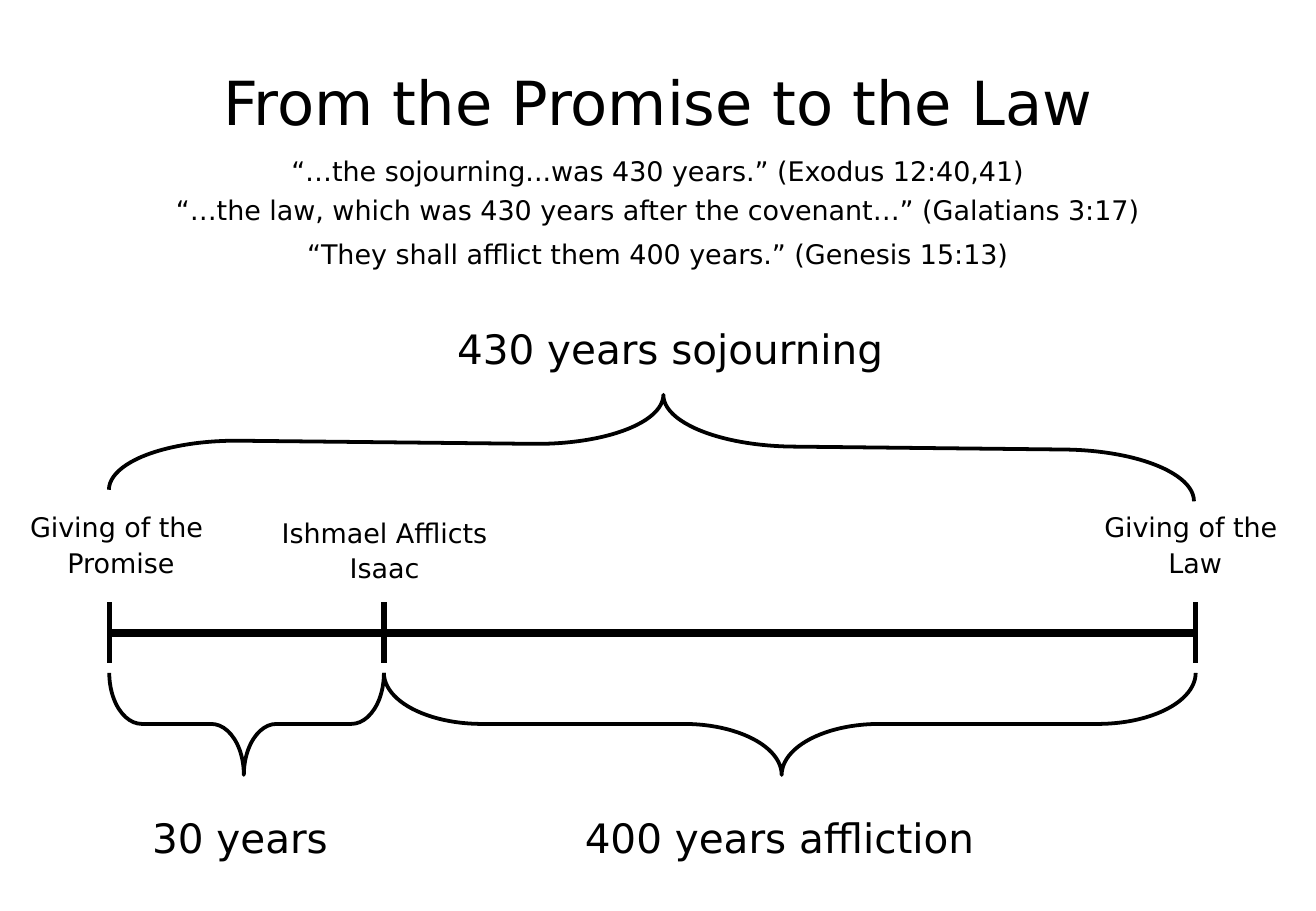
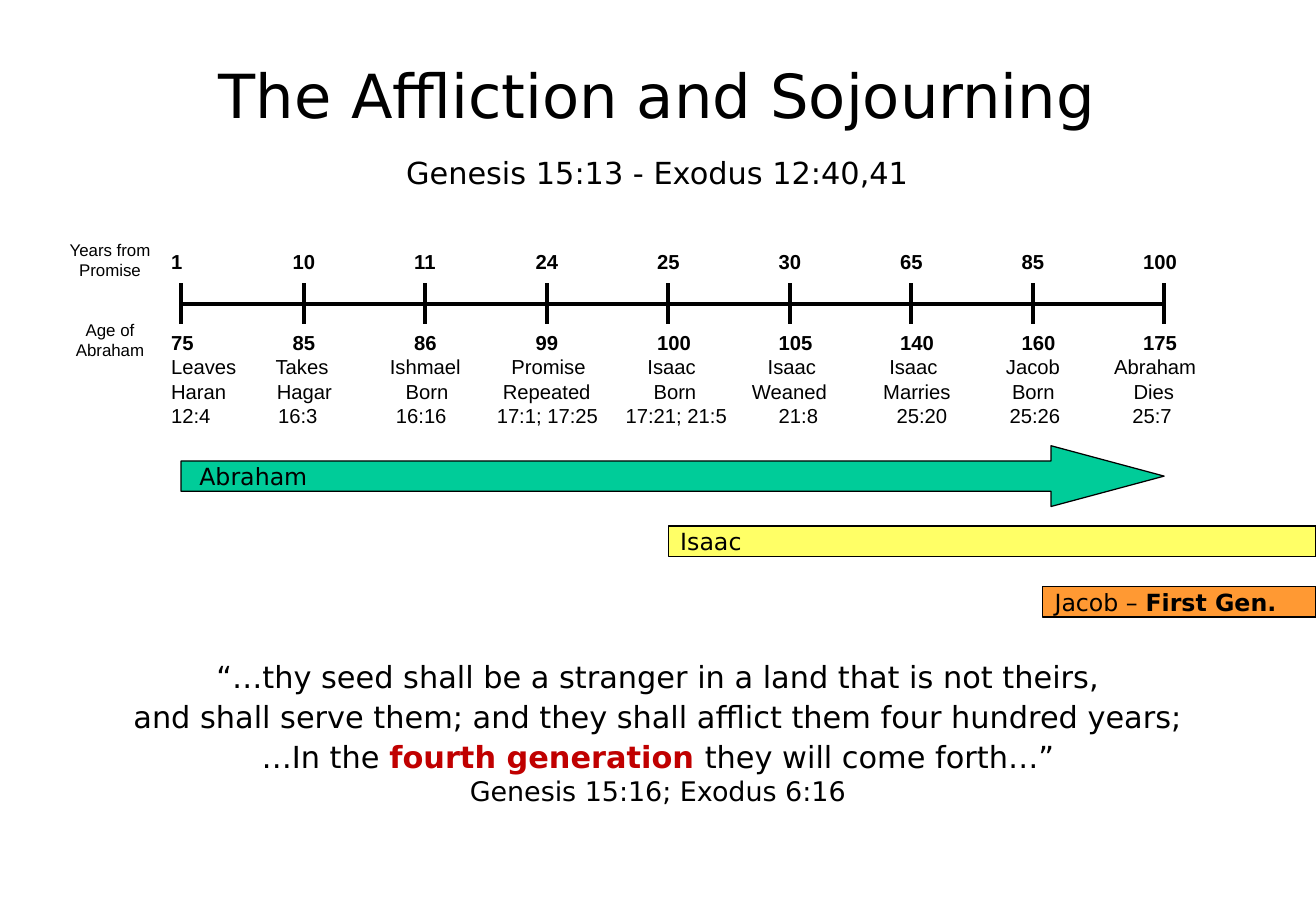
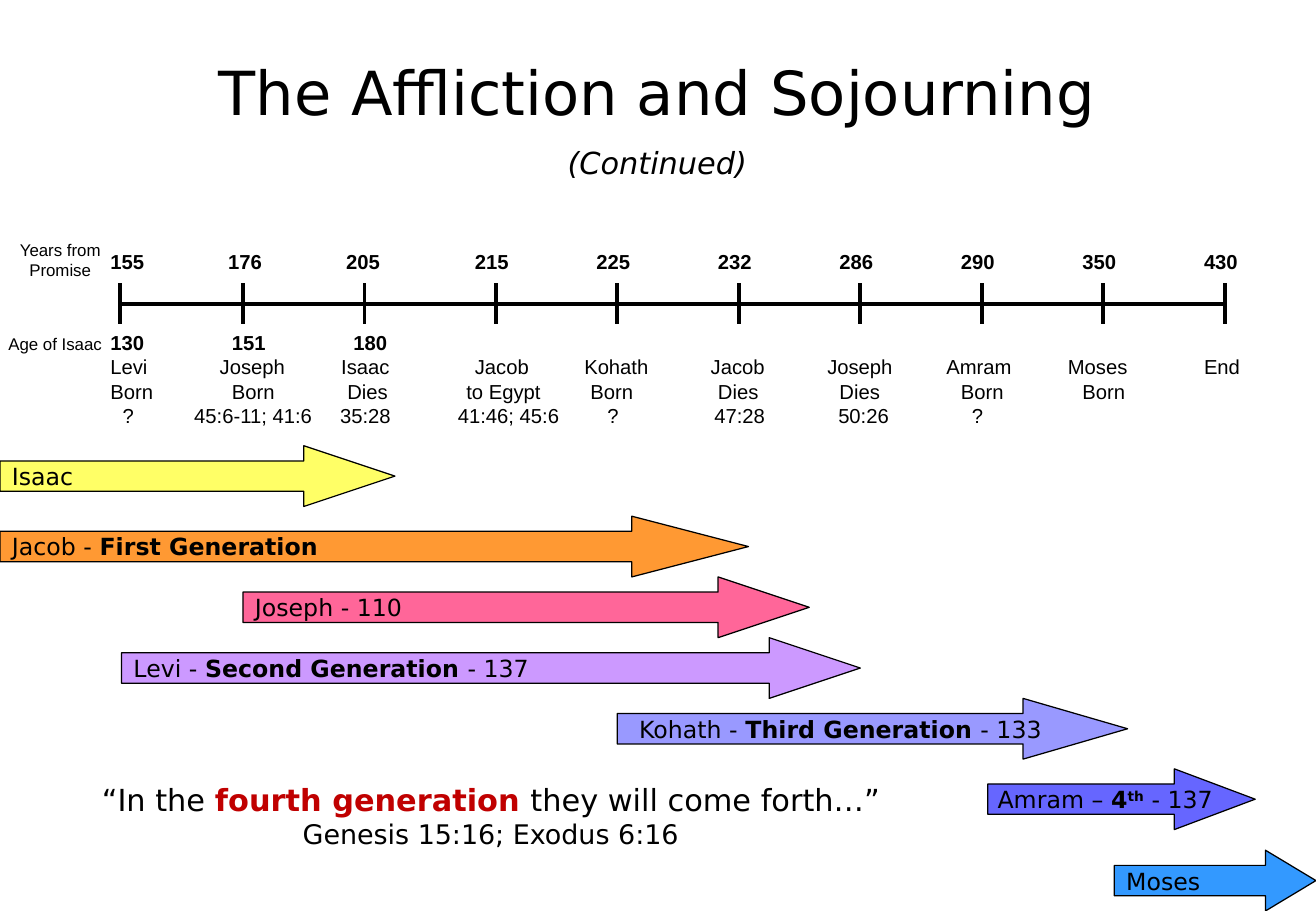
"""Build three slides on the years from the Promise to the Law."""
from lxml import etree
from pptx import Presentation
from pptx.dml.color import RGBColor
from pptx.enum.shapes import MSO_CONNECTOR, MSO_SHAPE
from pptx.enum.text import MSO_ANCHOR, MSO_AUTO_SIZE, PP_ALIGN
from pptx.oxml.ns import qn
from pptx.util import Inches, Pt

STRAIGHT = MSO_CONNECTOR.STRAIGHT
ARROW, BRACE, BAR = MSO_SHAPE.RIGHT_ARROW, MSO_SHAPE.LEFT_BRACE, MSO_SHAPE.RECTANGLE
TOP, MIDDLE = MSO_ANCHOR.TOP, MSO_ANCHOR.MIDDLE
LEFT, CENTER = PP_ALIGN.LEFT, PP_ALIGN.CENTER
FIXED = MSO_AUTO_SIZE.NONE

BLACK = RGBColor(0x00, 0x00, 0x00)
RED = RGBColor(0xC0, 0x00, 0x00)
GREEN = RGBColor(0x00, 0xCC, 0x99)
YELLOW = RGBColor(0xFF, 0xFF, 0x66)
ORANGE = RGBColor(0xFF, 0x99, 0x33)
PINK = RGBColor(0xFF, 0x66, 0x99)
LILAC = RGBColor(0xCC, 0x99, 0xFF)
PERIWINKLE = RGBColor(0x99, 0x99, 0xFF)
INDIGO = RGBColor(0x66, 0x66, 0xFF)
BLUE = RGBColor(0x33, 0x99, 0xFF)

BODY_FONT, SCALE_FONT = "DejaVu Sans", "Arial"
WIDTH, HEIGHT = 10.83, 7.5
AXIS_Y = 2.5
BOLD = {"bold": True}
ITALIC = {"italic": True}
SUPER = {"bold": True, "baseline": 30000}
KEY = {"bold": True, "color": RED}
FOURTH = ("fourth generation ", KEY)
COME_FORTH = ("they will come forth…”", {})
CITATION = "Genesis 15:16; Exodus 6:16"


class Deck:
    """Hold the shared style and the slide being built."""

    def __init__(self):
        self.prs = Presentation()
        self.prs.slide_width, self.prs.slide_height = Inches(WIDTH), Inches(HEIGHT)
        self.slide = None

    def fill_paragraph(self, paragraph, parts, size, font=BODY_FONT, align=LEFT, spacing=None, before=0):
        """Fill a paragraph from a string or from (text, style) parts."""
        paragraph.alignment = align
        paragraph.space_before = Pt(before)
        if spacing:
            paragraph.line_spacing = spacing
        for text, style in [(parts, {})] if isinstance(parts, str) else parts:
            run = paragraph.add_run()
            run.text = text
            run.font.name, run.font.size = font, Pt(size)
            run.font.bold = style.get("bold", False)
            run.font.italic = style.get("italic", False)
            run.font.color.rgb = style.get("color", BLACK)
            if "baseline" in style:
                run.font._element.set("baseline", str(style["baseline"]))

    def fill_frame(self, frame, lines, size, gap=0, **style):
        """Fill a frame with one paragraph a line and a gap between them."""
        for index, line in enumerate(lines):
            paragraph = frame.add_paragraph() if index else frame.paragraphs[0]
            self.fill_paragraph(paragraph, line, size, before=gap if index else 0, **style)

    def start(self, title, left, top, width, height, subtitle=None, gap=0):
        """Add a slide with its title and an optional subtitle."""
        self.slide = self.prs.slides.add_slide(self.prs.slide_layouts[5])
        heading = self.slide.shapes.title
        heading.left, heading.top = Inches(left), Inches(top)
        heading.width, heading.height = Inches(width), Inches(height)
        frame = heading.text_frame
        frame.auto_size, frame.vertical_anchor = FIXED, MIDDLE
        self.fill_paragraph(frame.paragraphs[0], title, 36, align=CENTER)
        if subtitle:
            self.fill_paragraph(frame.add_paragraph(), subtitle, 18, align=CENTER, before=gap)

    def text(self, left, top, width, height, lines, size, anchor=TOP, **style):
        """Add a wrapping text box and return its frame."""
        box = self.slide.shapes.add_textbox(Inches(left), Inches(top), Inches(width), Inches(height))
        frame = box.text_frame
        frame.word_wrap, frame.vertical_anchor = True, anchor
        self.fill_frame(frame, lines, size, **style)
        return frame

    def line(self, x1, y1, x2, y2, weight):
        """Add a straight black line."""
        rule = self.slide.shapes.add_connector(STRAIGHT, Inches(x1), Inches(y1), Inches(x2), Inches(y2))
        rule.line.color.rgb, rule.line.width = BLACK, Pt(weight)
        etree.SubElement(rule._element.spPr, qn("a:effectLst"))

    def outline(self, preset, left, top, width, height, weight):
        """Add a preset shape with a black outline."""
        shape = self.slide.shapes.add_shape(
            preset, Inches(left), Inches(top), Inches(width), Inches(height))
        shape.shadow.inherit = False
        shape.line.color.rgb, shape.line.width = BLACK, Pt(weight)
        return shape

    def brace(self, left, top, width, height, rotation, curl, point):
        """Add a rotated curly brace."""
        brace = self.outline(BRACE, left, top, width, height, 2.25)
        brace.fill.background()
        brace.rotation = rotation
        brace.adjustments[0], brace.adjustments[1] = curl, point

    def life(self, left, top, width, color, label, head=None, inset=0.1):
        """Add a lifetime as an arrow, or as a bar when it has no head."""
        span = self.outline(ARROW if head else BAR, left, top, width, 0.5 if head else 0.25, 0.75)
        span.fill.solid()
        span.fill.fore_color.rgb = color
        if head:
            span.adjustments[0], span.adjustments[1] = 0.5, head
        frame = span.text_frame
        frame.word_wrap, frame.vertical_anchor = False, MIDDLE
        frame.margin_left, frame.margin_right = Inches(inset), 0
        frame.margin_top = frame.margin_bottom = 0
        self.fill_paragraph(frame.paragraphs[0], label, 14)

    def row(self, paragraph, entries, style):
        """Set (start, label) entries in one line on tab stops."""
        stops = etree.SubElement(paragraph._p.get_or_add_pPr(), qn("a:tabLst"))
        for start, _ in entries:
            if start:
                etree.SubElement(stops, qn("a:tab"), pos=str(Inches(start)), algn="l")
        lead = "\t" if entries[0][0] else ""
        labels = lead + "\t".join(label for _, label in entries)
        self.fill_paragraph(paragraph, [(labels, style)], 12, SCALE_FONT)

    def timeline(self, left, ticks, years, ages, events):
        """Add the axis, its ticks and the rows above and below it."""
        self.line(ticks[0], AXIS_Y, ticks[-1], AXIS_Y, 2.25)
        for x in ticks:
            self.line(x, AXIS_Y - 0.17, x, AXIS_Y + 0.17, 2.25)
        above = self.text(left, 2, WIDTH - left, 0.3, [], 12)
        self.row(above.paragraphs[0], years, BOLD)
        below = self.text(left, 2.67, WIDTH - left, 0.91, [], 12)
        self.row(below.paragraphs[0], ages, BOLD)
        for entries in events:
            self.row(below.add_paragraph(), entries, {})

    def scale_name(self, left, top, name, align=CENTER):
        """Name one scale of the timeline."""
        self.text(left, top, 0.99, 0.43, [name], 10, font=SCALE_FONT, align=align)


def promise_to_law(deck):
    """Build the overview of the 430 years."""
    deck.start("From the Promise to the Law", 0, 0.42, WIDTH, 0.83)
    verse = {"align": CENTER, "spacing": 1.2}
    deck.text(0.25, 1.17, 10.33, 0.72, [
        "“…the sojourning...was 430 years.” (Exodus 12:40,41)",
        "“…the law, which was 430 years after the covenant…” (Galatians 3:17)"], 16, **verse)
    deck.text(0, 1.85, WIDTH, 0.42, ["“They shall afflict them 400 years.” (Genesis 15:13)"], 16, **verse)

    promise, affliction, law = 0.9, 3.16, 9.84
    deck.line(promise, 5.21, law, 5.21, 4.5)
    for x in (promise, affliction, law):
        deck.line(x, 4.96, x, 5.46, 3)
    for left, gift in ((0, "Promise"), (8.84, "Law")):
        deck.text(left, 4.21, 1.99, 0.61, ["Giving of the ", gift], 16, MIDDLE,
                  gap=8, align=CENTER, spacing=0.7)
    deck.text(2.17, 4.17, 1.99, 0.69, ["Ishmael Afflicts Isaac"], 16, MIDDLE, align=CENTER, spacing=1.1)

    deck.brace(6.08, 2.62, 0.84, 6.68, 270, 0.96, 0.49)
    deck.brace(1.61, 4.83, 0.84, 2.26, 270, 0.32, 0.49)
    deck.brace(4.95, -0.8, 0.83, 8.93, 90.6, 1.29, 0.49)
    for left, top, width, span in ((3.52, 2.6, 3.99, "430 years sojourning"),
                                   (1.04, 6.62, 1.87, "30 years"),
                                   (4.59, 6.62, 3.65, "400 years affliction")):
        deck.text(left, top, width, 0.5, [span], 24, MIDDLE, align=CENTER, spacing=1.1)


def affliction_begins(deck):
    """Build the timeline of Abraham's years."""
    deck.start("The Affliction and Sojourning", 0.81, 0.31, 9.2, 1.42,
               "Genesis 15:13 - Exodus 12:40,41", 14)
    deck.timeline(
        1.31, [1.49, *(2.5 + n for n in range(7)), 9.58],
        list(enumerate("1 10 11 24 25 30 65 85 100".split())),
        list(enumerate("75 85 86 99 100 105 140 160 175".split())),
        [[(0, "Leaves"), (0.86, "Takes"), (1.8, "Ishmael"), (2.8, "Promise"), (3.92, "Isaac"),
          (4.91, "Isaac"), (5.91, "Isaac"), (6.87, "Jacob"), (7.76, "Abraham")],
         [(0, "Haran"), (0.87, "Hagar"), (1.93, "Born"), (2.73, "Repeated"), (3.97, "Born"),
          (4.78, "Weaned"), (5.86, "Marries"), (6.92, "Born"), (7.92, "Dies")],
         [(0, "12:4"), (0.88, "16:3"), (1.85, "16:16"), (2.68, "17:1; 17:25"), (3.74, "17:21; 21:5"),
          (5, "21:8"), (5.97, "25:20"), (6.9, "25:26"), (7.91, "25:7")]])
    deck.scale_name(0.41, 1.92, "Years from Promise")
    deck.scale_name(0.41, 2.58, "Age of Abraham")

    deck.life(1.49, 3.67, 8.09, GREEN, "Abraham", 1.86, 0.15)
    deck.life(5.5, 4.33, 5.33, YELLOW, "Isaac")
    deck.life(8.58, 4.83, 2.25, ORANGE, [("Jacob – ", {}), ("First Gen.", BOLD)])

    quote = deck.text(0, 5.33, WIDTH, 1.37, [
        "“…thy seed shall be a stranger in a land that is not theirs,",
        "and shall serve them; and they shall afflict them four hundred years;",
        [("…In the ", {}), FOURTH, COME_FORTH]], 18, MIDDLE, align=CENTER, spacing=1.1)
    deck.fill_paragraph(quote.add_paragraph(), CITATION, 16, align=CENTER)


def affliction_continues(deck):
    """Build the timeline from Levi to the end of the sojourning."""
    deck.start("The Affliction and Sojourning", 0.81, 0.43, 9.2, 1.08,
               [("(Continued)", ITALIC)], 9.4)
    deck.timeline(
        0.81, [0.99, 2, 3, *(4.08 + n for n in range(7))],
        [(0, "155"), (0.97, "176"), (1.94, "205"),
         *enumerate("215 225 232 286 290 350 430".split(), 3)],
        list(enumerate("130 151 180".split())),
        [[(0, "Levi"), (0.9, "Joseph"), (1.9, "Isaac"), (3, "Jacob"), (3.9, "Kohath"),
          (4.94, "Jacob"), (5.9, "Joseph"), (6.88, "Amram"), (7.88, "Moses"), (9, "End")],
         [(0, "Born"), (1, "Born"), (1.95, "Dies"), (2.93, "to Egypt"), (3.95, "Born"),
          (5, "Dies"), (6, "Dies"), (7, "Born"), (8, "Born")],
         [(0.1, "?"), (0.69, "45:6-11; 41:6"), (1.89, "35:28"), (2.86, "41:46; 45:6"),
          (4.09, "?"), (4.97, "47:28"), (5.99, "50:26"), (7.09, "?")]])
    deck.scale_name(0, 1.92, "Years from Promise")
    deck.scale_name(-0.03, 2.7, "Age of Isaac", LEFT)

    deck.life(0, 3.67, 3.25, YELLOW, "Isaac", 1.5)
    deck.life(0, 4.25, 6.16, ORANGE, [("Jacob - ", {}), ("First Generation", BOLD)], 1.92)
    deck.life(2, 4.75, 4.66, PINK, "Joseph - 110", 1.5)
    deck.life(1, 5.25, 6.08, LILAC,
              [("Levi - ", {}), ("Second Generation ", BOLD), ("- 137", {})], 1.5)
    deck.life(5.08, 5.75, 4.2, PERIWINKLE,
              [("Kohath - ", {}), ("Third Generation ", BOLD), ("- 133", {})], 1.72, 0.18)
    deck.life(8.13, 6.33, 2.2, INDIGO,
              [("Amram – ", {}), ("4", BOLD), ("th", SUPER), (" - 137", {})], 1.33, 0.08)
    deck.life(9.17, 7, 1.66, BLUE, "Moses", 0.83)

    quote = deck.text(0.34, 6.38, 7.4, 0.67, [[("“In the ", {}), FOURTH, COME_FORTH]], 18,
                      MIDDLE, align=CENTER)
    deck.fill_paragraph(quote.add_paragraph(), CITATION, 16, align=CENTER)


def main():
    """Build and save the slides."""
    deck = Deck()
    for build in (promise_to_law, affliction_begins, affliction_continues):
        build(deck)
    deck.prs.save("out.pptx")


if __name__ == "__main__":
    main()
